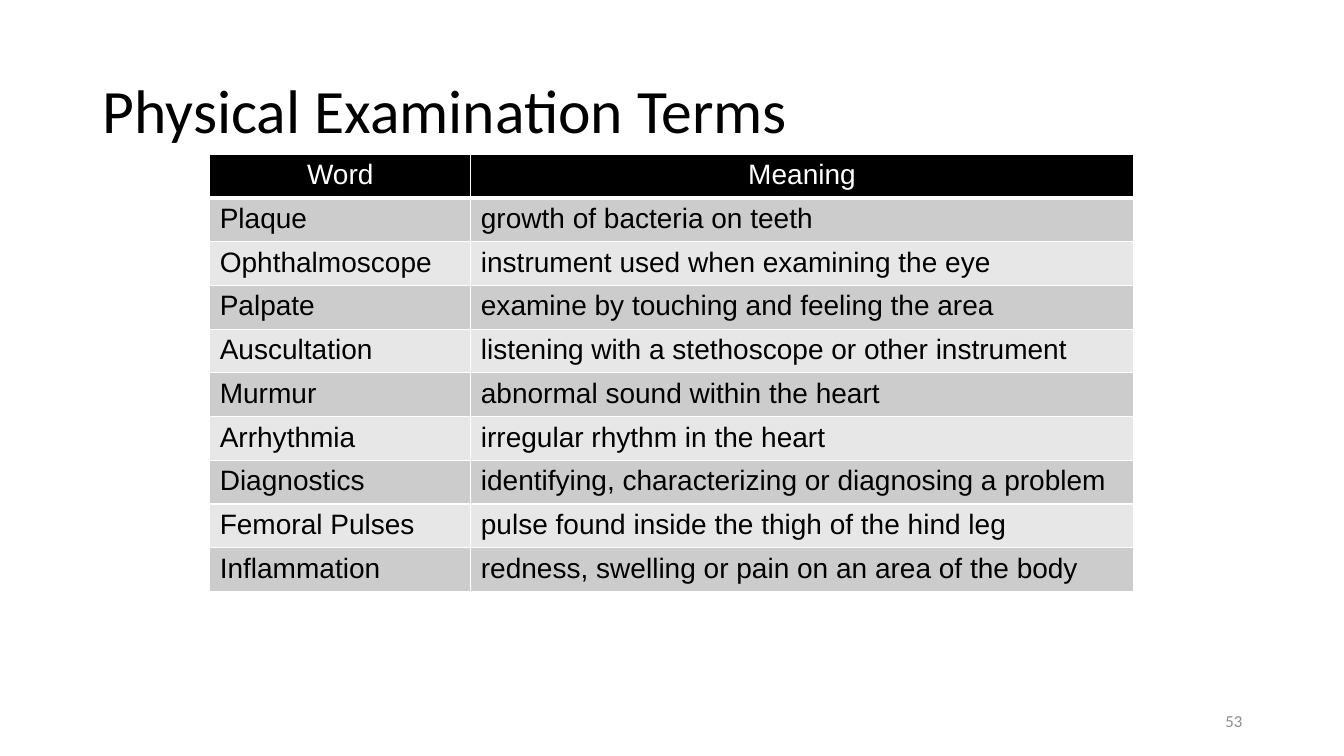
from dataclasses import dataclass

from lxml.etree import SubElement
from pptx import Presentation
from pptx.dml.color import RGBColor
from pptx.enum.text import MSO_ANCHOR, PP_ALIGN
from pptx.oxml.ns import qn
from pptx.util import Inches, Pt


@dataclass(frozen=True)
class Theme:
    heading_font: str = "Calibri"
    table_font: str = "Arial"
    title_size: int = 44
    table_size: int = 20
    number_size: int = 12
    black: str = "000000"
    white: str = "FFFFFF"
    gray: str = "8C8C8C"
    bands: tuple = ("CCCCCC", "E7E7E7")
    border: int = 1
    header_border: int = 3


TERMS = [
    ("Word", "Meaning"),
    ("Plaque", "growth of bacteria on teeth"),
    ("Ophthalmoscope", "instrument used when examining the eye"),
    ("Palpate", "examine by touching and feeling the area"),
    ("Auscultation", "listening with a stethoscope or other instrument"),
    ("Murmur", "abnormal sound within the heart"),
    ("Arrhythmia", "irregular rhythm in the heart"),
    ("Diagnostics", "identifying, characterizing or diagnosing a problem"),
    ("Femoral Pulses", "pulse found inside the thigh of the hind leg"),
    ("Inflammation", "redness, swelling or pain on an area of the body"),
]


class SlideBuilder:
    def __init__(self, slide, theme):
        self.slide = slide
        self.theme = theme

    def add_text_run(self, paragraph, text, font, size, color, align=PP_ALIGN.LEFT):
        paragraph.alignment = align
        run = paragraph.add_run()
        run.text = text
        run.font.name = font
        run.font.size = Pt(size)
        run.font.bold = False
        run.font.color.rgb = RGBColor.from_string(color)

    def text(self, box, text, size, color, align=PP_ALIGN.LEFT, spacing=1.0):
        shape = self.slide.shapes.add_textbox(*map(Inches, box))
        frame = shape.text_frame
        frame.word_wrap = True
        frame.vertical_anchor = MSO_ANCHOR.MIDDLE
        paragraph = frame.paragraphs[0]
        paragraph.line_spacing = spacing
        self.add_text_run(paragraph, text, self.theme.heading_font, size, color, align)

    def borders(self, cell, bottom):
        properties = cell._tc.get_or_add_tcPr()
        thin = self.theme.border
        for side, width in (("L", thin), ("R", thin), ("T", thin), ("B", bottom)):
            line = SubElement(properties, qn(f"a:ln{side}"), w=str(Pt(width)))
            fill = SubElement(line, qn("a:solidFill"))
            SubElement(fill, qn("a:srgbClr"), val=self.theme.white)

    def table(self, left, top, widths, row_height, rows):
        theme = self.theme
        frame = self.slide.shapes.add_table(
            len(rows), len(widths), Inches(left), Inches(top),
            Inches(sum(widths)), Inches(row_height * len(rows)))
        table = frame.table
        table.first_row = table.horz_banding = False
        for column, width in zip(table.columns, widths):
            column.width = Inches(width)

        for index, values in enumerate(rows):
            table.rows[index].height = Inches(row_height)
            # The header is black, the body alternates two grays
            if index == 0:
                fill, color, align = theme.black, theme.white, PP_ALIGN.CENTER
                bottom = theme.header_border
            else:
                fill, color, align = theme.bands[(index - 1) % 2], theme.black, PP_ALIGN.LEFT
                bottom = theme.border
            for cell, value in zip(table.rows[index].cells, values):
                self.borders(cell, bottom)
                cell.fill.solid()
                cell.fill.fore_color.rgb = RGBColor.from_string(fill)
                self.add_text_run(cell.text_frame.paragraphs[0], value,
                                  theme.table_font, theme.table_size, color, align)


def main():
    presentation = Presentation()
    presentation.slide_width = Inches(13.33)
    presentation.slide_height = Inches(7.5)
    theme = Theme()
    slide = presentation.slides.add_slide(presentation.slide_layouts[6])
    builder = SlideBuilder(slide, theme)

    # Title
    builder.text((0.92, 0.4, 11.5, 1.45), "Physical Examination Terms",
                 theme.title_size, theme.black, spacing=0.9)

    # Slide number
    builder.text((9.42, 6.95, 3, 0.4), "53", theme.number_size, theme.gray,
                 PP_ALIGN.RIGHT)

    # Glossary
    builder.table(2.08, 1.53, (2.59, 6.57), 0.41, TERMS)

    presentation.save("out.pptx")


if __name__ == "__main__":
    main()
